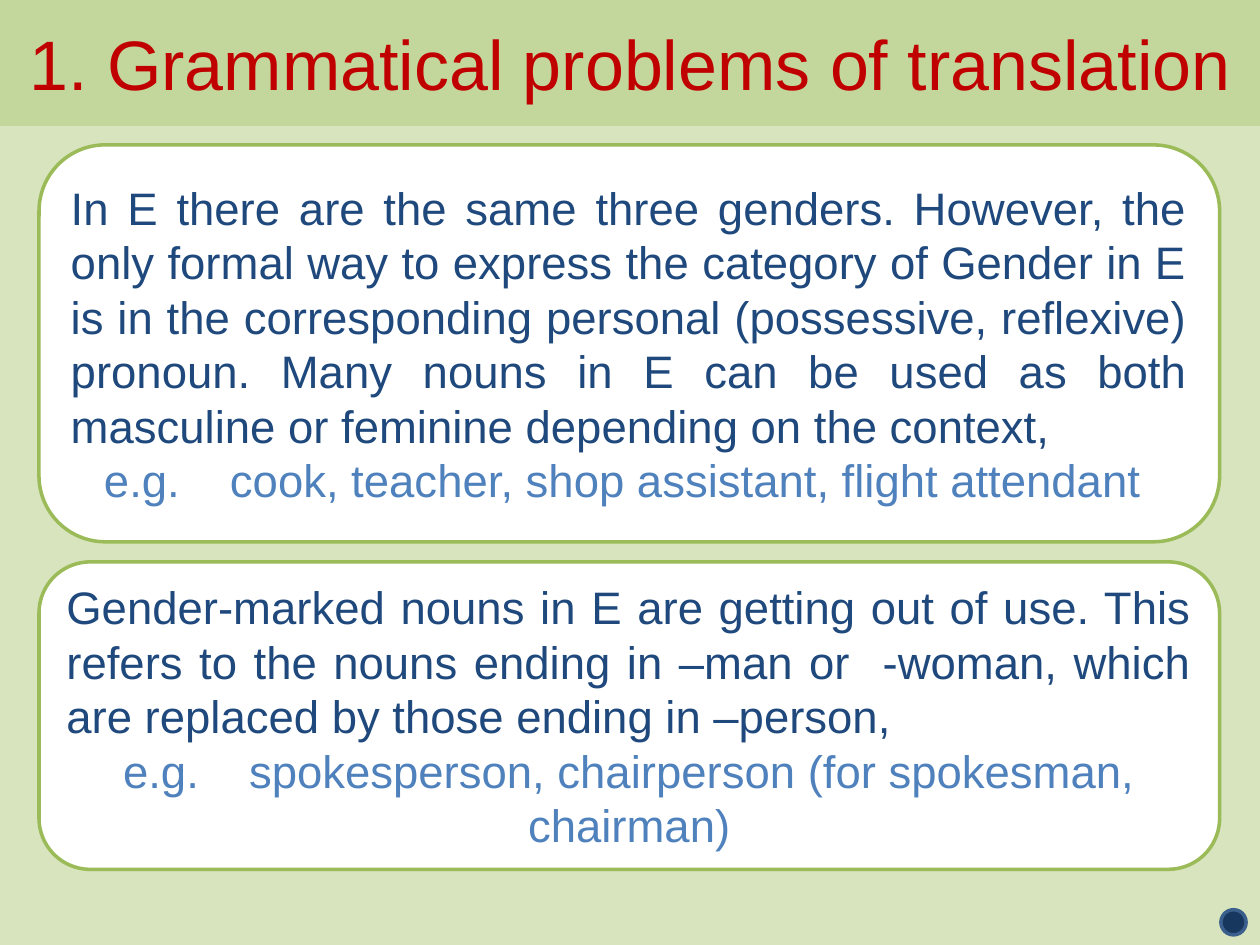
from pptx import Presentation
from pptx.dml.color import RGBColor
from pptx.enum.shapes import MSO_SHAPE
from pptx.enum.text import MSO_ANCHOR, MSO_AUTO_SIZE, PP_ALIGN
from pptx.util import Inches, Pt

ROUNDED, ELLIPSE = MSO_SHAPE.ROUNDED_RECTANGLE, MSO_SHAPE.OVAL
CENTER, JUSTIFY = PP_ALIGN.CENTER, PP_ALIGN.JUSTIFY
MIDDLE = MSO_ANCHOR.MIDDLE
NO_FIT = MSO_AUTO_SIZE.NONE
FONT = "Arial"
SIDE, WIDTH = 0.31, 9.37


def rgb(value):
    return RGBColor.from_string(value)


def paint(sp, fill, line):
    sp.fill.solid()
    sp.fill.fore_color.rgb = rgb(fill)
    sp.line.color.rgb = rgb(line)
    sp.line.width = Pt(2)


def add_shape(s, kind, box, fill, line):
    sp = s.shapes.add_shape(kind, *(Inches(v) for v in box))
    sp.shadow.inherit = False
    paint(sp, fill, line)
    return sp


def write(p, text, size, color, align):
    p.alignment = align
    r = p.add_run()
    r.text = text
    r.font.name = FONT
    r.font.size = Pt(size)
    r.font.color.rgb = rgb(color)


def set_frame(tf):
    tf.word_wrap = True
    tf.auto_size = NO_FIT
    tf.vertical_anchor = MIDDLE


def title_bar(s, box, text):
    sp = s.shapes.title
    sp.left, sp.top, sp.width, sp.height = (Inches(v) for v in box)
    paint(sp, "C3D69B", "C3D69B")
    set_frame(sp.text_frame)
    write(sp.text_frame.paragraphs[0], text, 40, "C00000", CENTER)


def rule_card(s, box, rule, example):
    tf = add_shape(s, ROUNDED, box, "FFFFFF", "9BBB59").text_frame
    set_frame(tf)
    write(tf.paragraphs[0], rule, 26, "1F497D", JUSTIFY)
    write(tf.add_paragraph(), example, 26, "4F81BD", CENTER)


def corner_dot(s, box):
    add_shape(s, ELLIPSE, box, "17375E", "3A5F8C")


def main():
    prs = Presentation()
    prs.slide_width, prs.slide_height = Inches(10), Inches(7.5)
    s = prs.slides.add_slide(prs.slide_layouts[5])
    s.background.fill.solid()
    s.background.fill.fore_color.rgb = rgb("D7E4BD")

    title_bar(s, (0, 0, 10, 0.99), "1. Grammatical problems of translation")
    rule_card(
        s, (SIDE, 1.15, WIDTH, 3.15),
        "In E there are the same three genders. However, the only formal way "
        "to express the category of Gender in E is in the corresponding "
        "personal (possessive, reflexive) pronoun. Many nouns in E can be used "
        "as both masculine or feminine depending on the context, ",
        "e.g.\tcook, teacher, shop assistant, flight attendant ")
    corner_dot(s, (9.69, 7.22, 0.2, 0.2))
    rule_card(
        s, (SIDE, 4.46, WIDTH, 2.44),
        "Gender-marked nouns in E are getting out of use. This refers to the "
        "nouns ending in –man or  -woman, which are replaced by those ending "
        "in –person,",
        "e.g. \tspokesperson, chairperson (for spokesman, chairman)")
    prs.save("out.pptx")


if __name__ == "__main__":
    main()
